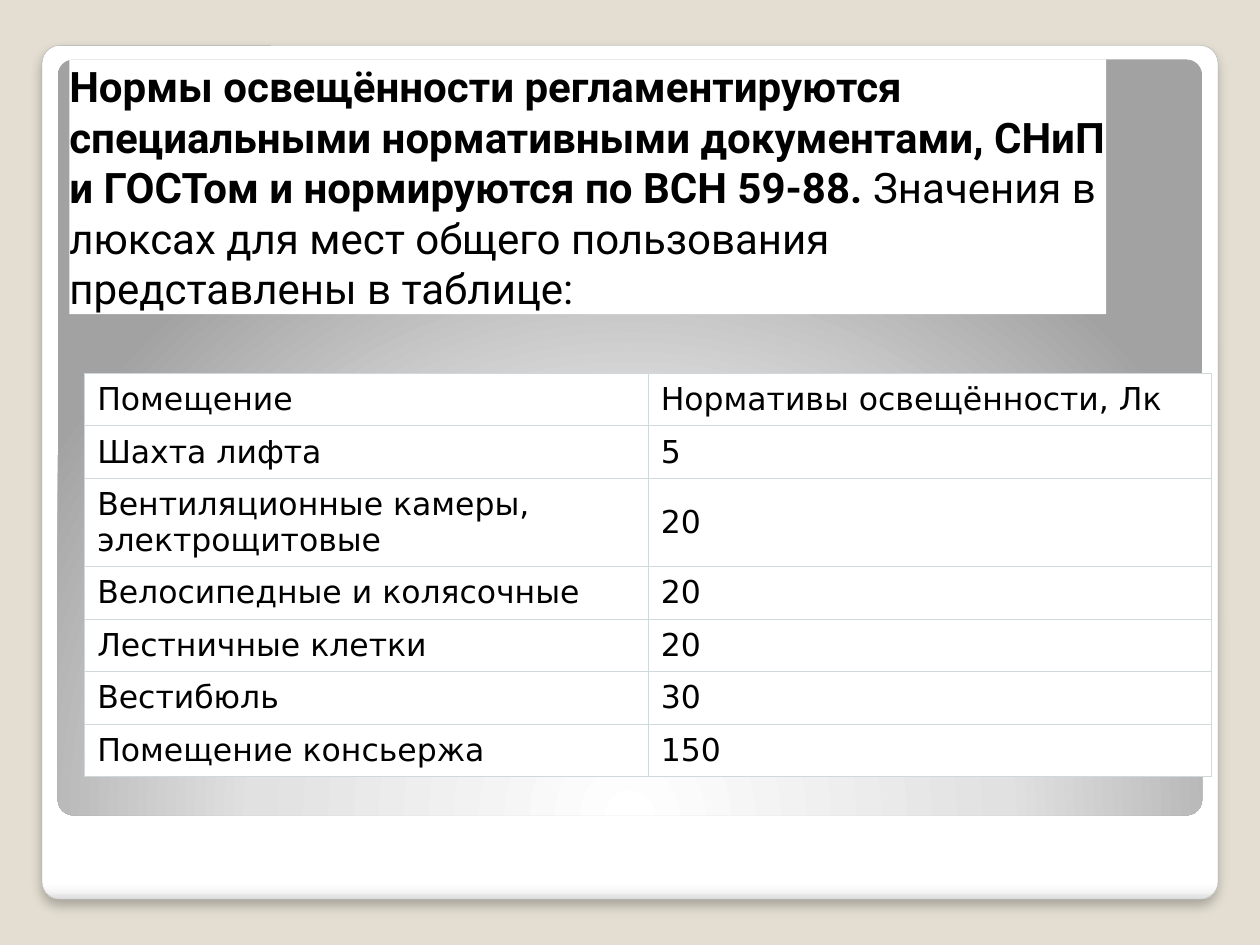
from lxml.etree import SubElement
from pptx import Presentation
from pptx.dml.color import RGBColor
from pptx.enum.shapes import MSO_SHAPE
from pptx.enum.text import MSO_ANCHOR, MSO_AUTO_SIZE, PP_ALIGN
from pptx.oxml import parse_xml
from pptx.oxml.ns import nsdecls, qn
from pptx.util import Pt

COLORS = {
    "background": "E3DED1",
    "white": "FFFFFF",
    "text": "000000",
    "border": "D0D8DB",
    "card_line": "A4A4A4",
}
CARD_STOPS = [(0, "FFFFFF"), (98, "FFFFFF"), (99, "F7F7F7"), (100, "DADADA")]
PANEL_STOPS = [(0, "FFFFFF"), (55, "E1E1E1"), (100, "A2A2A2")]
CARD_DIRECTION = '<a:lin ang="5400000" scaled="0"/>'
PANEL_DIRECTION = (
    '<a:path path="circle">'
    '<a:fillToRect l="50000" t="175000" r="50000" b="-75000"/></a:path>'
)
TITLE_RUNS = [
    ("Нормы освещённости регламентируются специальными нормативными документами, "
     "СНиП и ГОСТом и нормируются по ВСН 59-88.", True),
    (" Значения в люксах для мест общего пользования представлены в таблице:", False),
]
LIGHT_LEVELS = [
    ("Помещение", "Нормативы освещённости, Лк"),
    ("Шахта лифта", "5"),
    ("Вентиляционные камеры, электрощитовые", "20"),
    ("Велосипедные и колясочные", "20"),
    ("Лестничные клетки", "20"),
    ("Вестибюль", "30"),
    ("Помещение консьержа", "150"),
]
COLUMN_WIDTH, ROW_HEIGHT, TALL_ROW_HEIGHT, TALL_ROW = 322, 30, 50.5, 2


def color(name):
    return RGBColor.from_string(COLORS[name])


def add_panel(page, bounds, stops, direction):
    """Add a rounded panel with a gradient fill and no line."""
    panel = page.shapes.add_shape(MSO_SHAPE.ROUNDED_RECTANGLE, *map(Pt, bounds))
    panel.adjustments[0] = 0.021
    panel.shadow.inherit = False
    panel.line.fill.background()
    marks = "".join(
        f'<a:gs pos="{stop * 1000}"><a:srgbClr val="{shade}"/></a:gs>'
        for stop, shade in stops
    )
    gradient = parse_xml(
        f'<a:gradFill {nsdecls("a")} rotWithShape="1">'
        f"<a:gsLst>{marks}</a:gsLst>{direction}</a:gradFill>"
    )
    panel._element.spPr.find(qn("a:prstGeom")).addnext(gradient)
    return panel


def add_card(page):
    """Add the outlined card with its soft shadow."""
    card = add_panel(page, (24, 26, 672, 488), CARD_STOPS, CARD_DIRECTION)
    card.line.color.rgb = color("card_line")
    card.line.width = Pt(0.16)
    effects = card._element.spPr.find(qn("a:effectLst"))
    effects.append(parse_xml(
        f'<a:outerShdw {nsdecls("a")} blurRad="{Pt(6)}" dist="{Pt(4)}" '
        'dir="5400000" algn="tl" rotWithShape="0">'
        '<a:srgbClr val="000000"><a:alpha val="25000"/></a:srgbClr></a:outerShdw>'
    ))


def add_span(para, text, font, size, bold=False):
    """Add one formatted run."""
    span = para.add_run()
    span.text = text
    span.font.name = font
    span.font.size = Pt(size)
    span.font.bold = bold
    span.font.color.rgb = color("text")


def fill_title(page):
    """Place the title above the panels and fill it."""
    title = page.shapes.title
    title.left, title.top, title.width, title.height = map(Pt, (39.6, 34, 592.5, 145.5))
    title.fill.solid()
    title.fill.fore_color.rgb = color("white")
    frame = title.text_frame
    frame.word_wrap = True
    frame.auto_size = MSO_AUTO_SIZE.SHAPE_TO_FIT_TEXT
    frame.vertical_anchor = MSO_ANCHOR.MIDDLE
    frame.margin_left = frame.margin_right = frame.margin_top = frame.margin_bottom = 0
    para = frame.paragraphs[0]
    para.alignment = PP_ALIGN.LEFT
    for text, bold in TITLE_RUNS:
        add_span(para, text, "Roboto", 24, bold)
    page.shapes._spTree.append(title._element)


def fill_cell(cell, text):
    """Write a cell and give it a white fill and thin borders."""
    cell.vertical_anchor = MSO_ANCHOR.MIDDLE
    cell.margin_left = cell.margin_right = Pt(7.2)
    cell.margin_top = cell.margin_bottom = Pt(4.3)
    add_span(cell.text_frame.paragraphs[0], text, "DejaVu Sans", 18)
    properties = cell._tc.get_or_add_tcPr()
    for side in ("lnL", "lnR", "lnT", "lnB"):
        border = SubElement(properties, qn(f"a:{side}"), w=str(Pt(0.75)))
        paint = SubElement(border, qn("a:solidFill"))
        SubElement(paint, qn("a:srgbClr"), val=COLORS["border"])
    cell.fill.solid()
    cell.fill.fore_color.rgb = color("white")


def add_light_table(page):
    """Add the table of light levels."""
    heights = [TALL_ROW_HEIGHT if row == TALL_ROW else ROW_HEIGHT
               for row in range(len(LIGHT_LEVELS))]
    bounds = (48.4, 213.4, 2 * COLUMN_WIDTH, sum(heights))
    table = page.shapes.add_table(len(heights), 2, *map(Pt, bounds)).table
    table.first_row = table.horz_banding = False
    for column in table.columns:
        column.width = Pt(COLUMN_WIDTH)
    for row, height, texts in zip(table.rows, heights, LIGHT_LEVELS):
        row.height = Pt(height)
        for cell, text in zip(row.cells, texts):
            fill_cell(cell, text)


def main():
    deck = Presentation()
    deck.slide_width, deck.slide_height = Pt(720), Pt(540)
    page = deck.slides.add_slide(deck.slide_layouts[5])
    page.background.fill.solid()
    page.background.fill.fore_color.rgb = color("background")
    add_card(page)
    add_panel(page, (33, 34, 654, 432), PANEL_STOPS, PANEL_DIRECTION)
    add_light_table(page)
    fill_title(page)
    deck.save("out.pptx")


if __name__ == "__main__":
    main()
